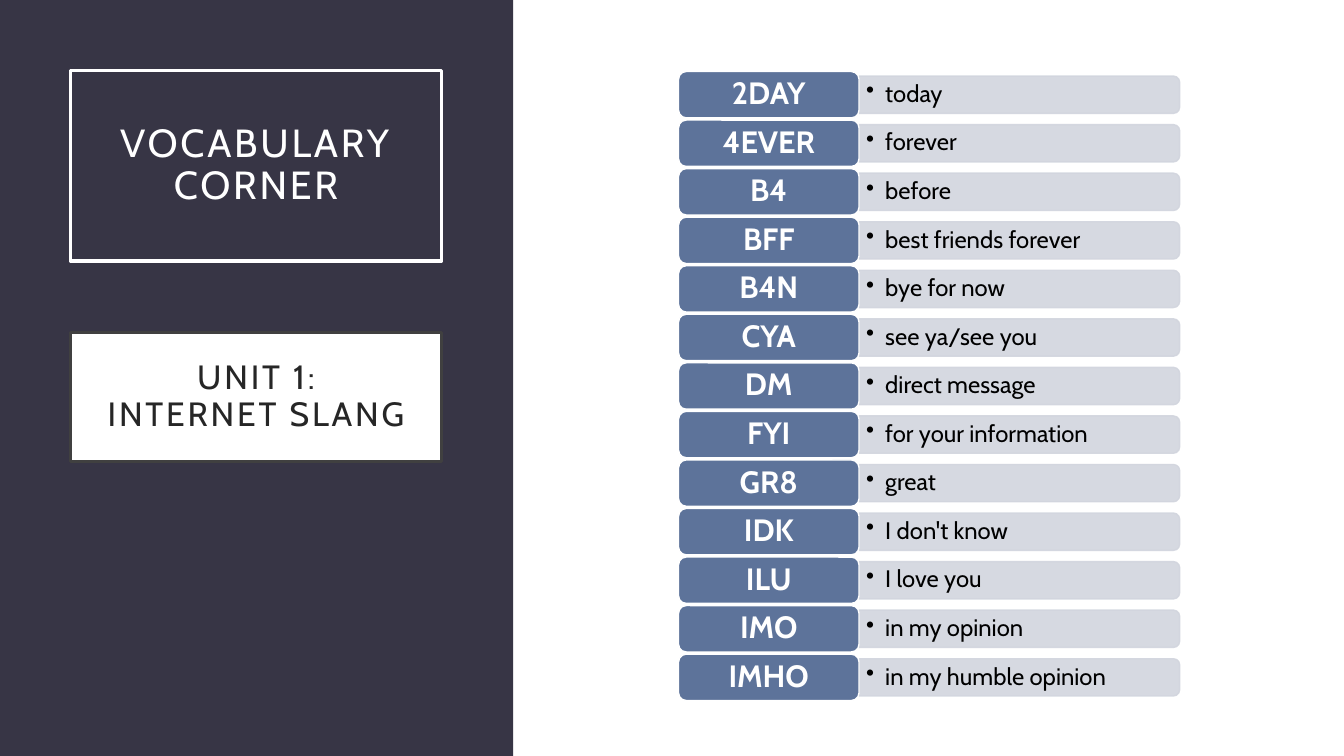
"""Build the vocabulary slide: a dark title panel and a list of internet slang."""
from dataclasses import dataclass
from typing import Any, Optional

from lxml import etree
from pptx import Presentation
from pptx import util as u
from pptx.dml import color
from pptx.enum import shapes, text
from pptx.oxml import ns

FONT = "Cabin"
ROW_TOP, ROW_STEP = 0.71, (6.49 - 0.71) / 12
LABEL_LEFT, LABEL_W, LABEL_H = 6.73, 1.79, 0.46
BAR_LEFT, BAR_W, BAR_H = 8.52, 3.18, 0.37


@dataclass(frozen=True)
class Box:
    left: float
    top: float
    width: float
    height: float

    def emu(self) -> list[int]:
        return [u.Inches(v) for v in (self.left, self.top, self.width, self.height)]


@dataclass(frozen=True)
class TextStyle:
    size: int
    color: str
    margins: tuple[float, float]
    bold: bool = False
    spacing: int = 0
    bullet: bool = False


@dataclass(frozen=True)
class Slang:
    short: str
    meaning: str


TITLE = TextStyle(28, "FFFFFF", (0.2, 0.2), spacing=2)
UNIT = TextStyle(24, "262626", (0.2, 0.2), spacing=2)
LABEL = TextStyle(22, "FFFFFF", (0.11, 0.07), bold=True)
MEANING = TextStyle(17, "000000", (0.07, 0.04), bullet=True)

SLANG = [
    Slang("2DAY", "today"),
    Slang("4EVER", "forever"),
    Slang("B4", "before"),
    Slang("BFF", "best friends forever"),
    Slang("B4N", "bye for now"),
    Slang("CYA", "see ya/see you"),
    Slang("DM", "direct message"),
    Slang("FYI", "for your information"),
    Slang("GR8", "great"),
    Slang("IDK", "I don't know"),
    Slang("ILU", "I love you"),
    Slang("IMO", "in my opinion"),
    Slang("IMHO", "in my humble opinion"),
]


def rgb(value: str) -> color.RGBColor:
    return color.RGBColor.from_string(value)


def set_attrs(obj: Any, values: dict[str, Any]) -> None:
    for name, value in values.items():
        setattr(obj, name, value)


def add_box(s: Any, kind: Any, box: Box, fill: Optional[str] = None,
            line: Optional[str] = None, line_width: float = 1) -> Any:
    sp = s.shapes.add_shape(kind, *box.emu())
    sp.shadow.inherit = False
    for part, value in ((sp.fill, fill), (sp.line.fill, line)):
        if value:
            part.solid()
            part.fore_color.rgb = rgb(value)
        else:
            part.background()
    if line:
        sp.line.width = u.Pt(line_width)
    return sp


def add_bullet(p: Any) -> None:
    pPr = p._p.get_or_add_pPr()
    pPr.set("marL", str(u.Inches(0.19)))
    pPr.set("indent", str(u.Inches(-0.19)))
    etree.SubElement(pPr, ns.qn("a:buChar")).set("char", "•")


def write(sp: Any, lines: list[str], style: TextStyle) -> None:
    tf = sp.text_frame
    side, edge = (u.Inches(m) for m in style.margins)
    set_attrs(tf, {
        "word_wrap": True, "vertical_anchor": text.MSO_ANCHOR.MIDDLE,
        "margin_left": side, "margin_right": side,
        "margin_top": edge, "margin_bottom": edge,
    })
    align = text.PP_ALIGN.LEFT if style.bullet else text.PP_ALIGN.CENTER
    for i, content in enumerate(lines):
        p = tf.add_paragraph() if i else tf.paragraphs[0]
        set_attrs(p, {"alignment": align, "line_spacing": 0.9})
        if style.bullet:
            p.level = 1
            add_bullet(p)
        r = p.add_run()
        r.text = content
        set_attrs(r.font, {"name": FONT, "size": u.Pt(style.size), "bold": style.bold})
        r.font.color.rgb = rgb(style.color)
        if style.spacing:
            r._r.get_or_add_rPr().set("spc", str(style.spacing * 100))


def add_bar(s: Any, center_y: float) -> None:
    box = Box(BAR_LEFT + (BAR_W - BAR_H) / 2, center_y - BAR_W / 2, BAR_H, BAR_W)
    sp = add_box(s, shapes.MSO_SHAPE.ROUND_2_SAME_RECTANGLE, box, "D2D5DE", "D2D5DE")
    sp.rotation = 90
    for clr in sp._element.spPr.iter(ns.qn("a:srgbClr")):
        etree.SubElement(clr, ns.qn("a:alpha")).set("val", "90000")


def add_row(s: Any, slang: Slang, top: float) -> None:
    center_y = top + LABEL_H / 2
    add_bar(s, center_y)
    meaning = s.shapes.add_textbox(*Box(BAR_LEFT, center_y - 0.165, 3.16, 0.33).emu())
    write(meaning, [slang.meaning], MEANING)
    label = add_box(s, shapes.MSO_SHAPE.ROUNDED_RECTANGLE,
                    Box(LABEL_LEFT, top, LABEL_W, LABEL_H), "5D739A", "FFFFFF")
    write(label, [slang.short], LABEL)


def main() -> None:
    prs = Presentation()
    set_attrs(prs, {"slide_width": u.Inches(13.33), "slide_height": u.Inches(7.5)})
    s = prs.slides.add_slide(prs.slide_layouts[6])
    rect = shapes.MSO_SHAPE.RECTANGLE
    add_box(s, rect, Box(0, 0, 5.09, 7.5), "373545")
    title = add_box(s, rect, Box(0.7, 0.7, 3.68, 1.89), line="FFFFFF", line_width=2.5)
    write(title, ["VOCABULARY CORNER"], TITLE)
    unit = add_box(s, rect, Box(0.7, 3.3, 3.68, 1.28), "FFFFFF", "404040", 2.5)
    write(unit, ["UNIT 1:", "INTERNET SLANG"], UNIT)
    for i, slang in enumerate(SLANG):
        add_row(s, slang, ROW_TOP + i * ROW_STEP)
    prs.save("out.pptx")


if __name__ == "__main__":
    main()
